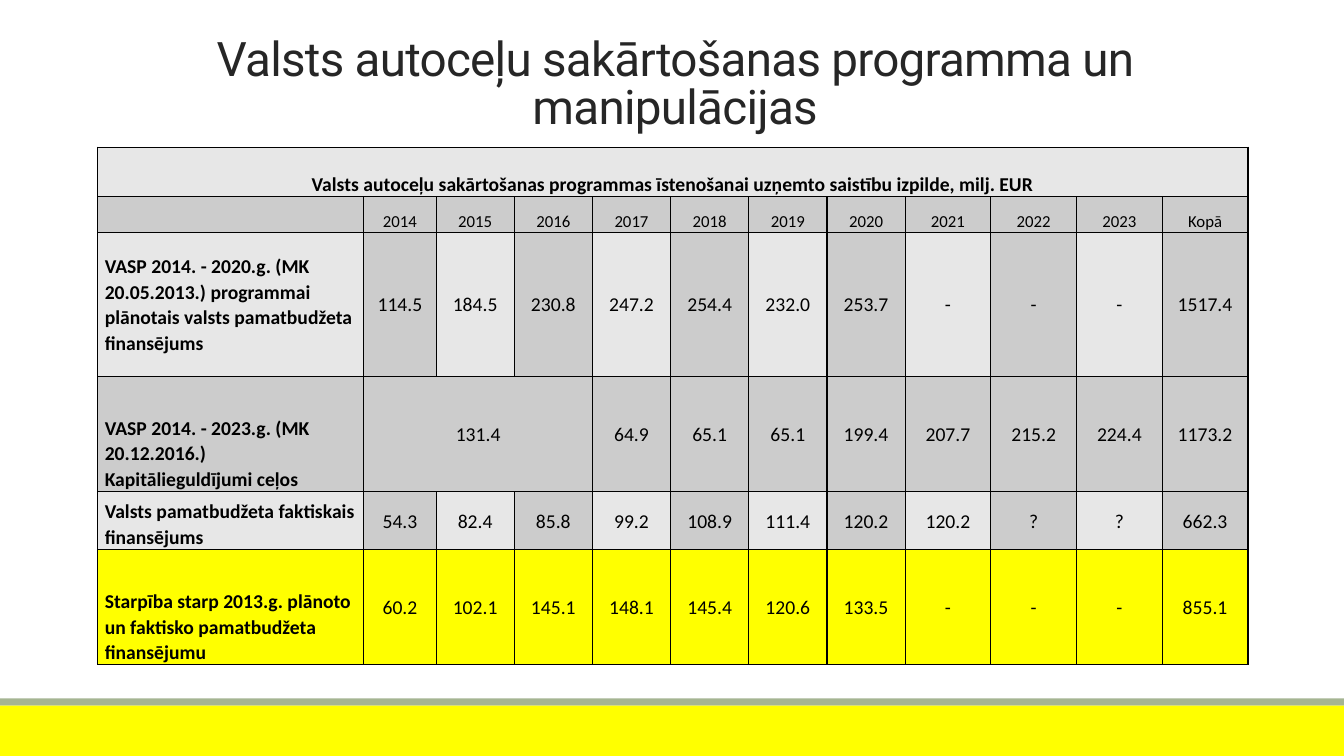
from dataclasses import dataclass

from lxml.etree import SubElement
from pptx import Presentation
from pptx.dml.color import RGBColor
from pptx.enum.shapes import MSO_SHAPE
from pptx.enum.text import MSO_ANCHOR, PP_ALIGN
from pptx.oxml.ns import qn
from pptx.util import Cm, Pt


@dataclass(frozen=True)
class Theme:
    """Colours, fonts and type sizes."""
    ink: str = "262626"
    black: str = "000000"
    light: str = "E7E7E7"
    dark: str = "CCCCCC"
    yellow: str = "FFFF00"
    green: str = "A5B592"
    head: str = "Roboto"
    body: str = "Calibri"
    title: int = 34
    text: int = 14
    small: int = 12


THEME = Theme()
TITLE = "Valsts autoceļu sakārtošanas programma un manipulācijas"
COLS = [6.71, 1.82] + [1.97] * 6 + [2.16] * 4
ROWS = [1.25, 0.89, 3.64, 2.9, 1.46, 2.9]
DATA = [
    ["Valsts autoceļu sakārtošanas programmas īstenošanai uzņemto saistību izpilde, milj. EUR"]
    + [""] * 11,
    ["", *map(str, range(2014, 2024)), "Kopā"],
    ["VASP 2014. - 2020.g. (MK 20.05.2013.) programmai plānotais valsts pamatbudžeta finansējums",
     "114.5", "184.5", "230.8", "247.2", "254.4", "232.0", "253.7", "-", "-", "-", "1517.4"],
    ["VASP 2014. - 2023.g. (MK 20.12.2016.)\nKapitālieguldījumi ceļos",
     "131.4", "", "", "64.9", "65.1", "65.1", "199.4", "207.7", "215.2", "224.4", "1173.2"],
    ["Valsts pamatbudžeta faktiskais finansējums",
     "54.3", "82.4", "85.8", "99.2", "108.9", "111.4", "120.2", "120.2", "?", "?", "662.3"],
    ["Starpība starp 2013.g. plānoto un faktisko pamatbudžeta finansējumu",
     "60.2", "102.1", "145.1", "148.1", "145.4", "120.6", "133.5", "-", "-", "-", "855.1"],
]


def style(frame, font, size, color, bold, align, gap):
    """Format every paragraph and run of a text frame."""
    for para in frame.paragraphs:
        para.alignment = align
        para.line_spacing = gap
        for run in para.runs:
            run.font.name = font
            run.font.size = Pt(size)
            run.font.bold = bold
            run.font.color.rgb = RGBColor.from_string(color)


def add_title(slide, left, top, width, height):
    """Place the slide title at the foot of its box."""
    frame = slide.shapes.add_textbox(Cm(left), Cm(top), Cm(width), Cm(height)).text_frame
    frame.word_wrap = True
    frame.vertical_anchor = MSO_ANCHOR.BOTTOM
    frame.text = TITLE
    style(frame, THEME.head, THEME.title, THEME.ink, False, PP_ALIGN.CENTER, 0.85)
    for run in frame.paragraphs[0].runs:
        run.font._element.set("spc", "-50")


def add_edges(cell):
    """Draw a thin black line on all four sides of a cell."""
    props = cell._tc.get_or_add_tcPr()
    for side in ("a:lnL", "a:lnR", "a:lnT", "a:lnB"):
        line = SubElement(props, qn(side), w=str(Pt(1)))
        fill = SubElement(line, qn("a:solidFill"))
        SubElement(fill, qn("a:srgbClr"), val=THEME.black)


def pick_fill(row, col):
    """Choose the fill of a cell from its row and column."""
    if row == 5:
        return THEME.yellow
    if row in (1, 3):
        return THEME.dark
    return THEME.dark if row and col % 2 else THEME.light


def fill_cell(cell, row, col):
    """Write and format one cell."""
    label = col == 0
    cell.margin_left = cell.margin_right = Cm(0.18)
    cell.margin_top = cell.margin_bottom = 0
    middle = row == 2 or (row > 2 and not label)
    cell.vertical_anchor = MSO_ANCHOR.MIDDLE if middle else MSO_ANCHOR.BOTTOM
    add_edges(cell)
    cell.fill.solid()
    cell.fill.fore_color.rgb = RGBColor.from_string(pick_fill(row, col))
    cell.text_frame.text = DATA[row][col]
    size = THEME.small if row == 1 else THEME.text
    align = PP_ALIGN.LEFT if label and row else PP_ALIGN.CENTER
    style(cell.text_frame, THEME.body, size, THEME.black, label, align, 1.07)


def add_grid(slide, left, top):
    """Place the funding table from its top left corner."""
    grid = slide.shapes.add_table(
        len(ROWS), len(COLS), Cm(left), Cm(top), Cm(sum(COLS)), Cm(sum(ROWS))).table
    for col, width in enumerate(COLS):
        grid.columns[col].width = Cm(width)
    for row, height in enumerate(ROWS):
        grid.rows[row].height = Cm(height)
        for col in range(len(COLS)):
            fill_cell(grid.cell(row, col), row, col)
    grid.cell(0, 0).merge(grid.cell(0, len(COLS) - 1))
    grid.cell(3, 1).merge(grid.cell(3, 3))


def add_foot(slide, left, top, width, height):
    """Place the yellow band with a thin green strip on top."""
    strip = 0.18
    bands = [(top, strip, THEME.green), (top + strip, height - strip, THEME.yellow)]
    for start, depth, color in bands:
        band = slide.shapes.add_shape(
            MSO_SHAPE.RECTANGLE, Cm(left), Cm(start), Cm(width), Cm(depth))
        band.shadow.inherit = False
        band.fill.solid()
        band.fill.fore_color.rgb = RGBColor.from_string(color)
        band.line.fill.background()


def main():
    """Build and save the slide."""
    deck = Presentation()
    deck.slide_width, deck.slide_height = Cm(33.87), Cm(19.05)
    slide = deck.slides.add_slide(deck.slide_layouts[6])
    add_foot(slide, 0, 17.6, 33.87, 1.45)
    add_title(slide, 1.52, 1.68, 30.99, 1.83)
    add_grid(slide, 2.46, 3.71)
    deck.save("out.pptx")


if __name__ == "__main__":
    main()
